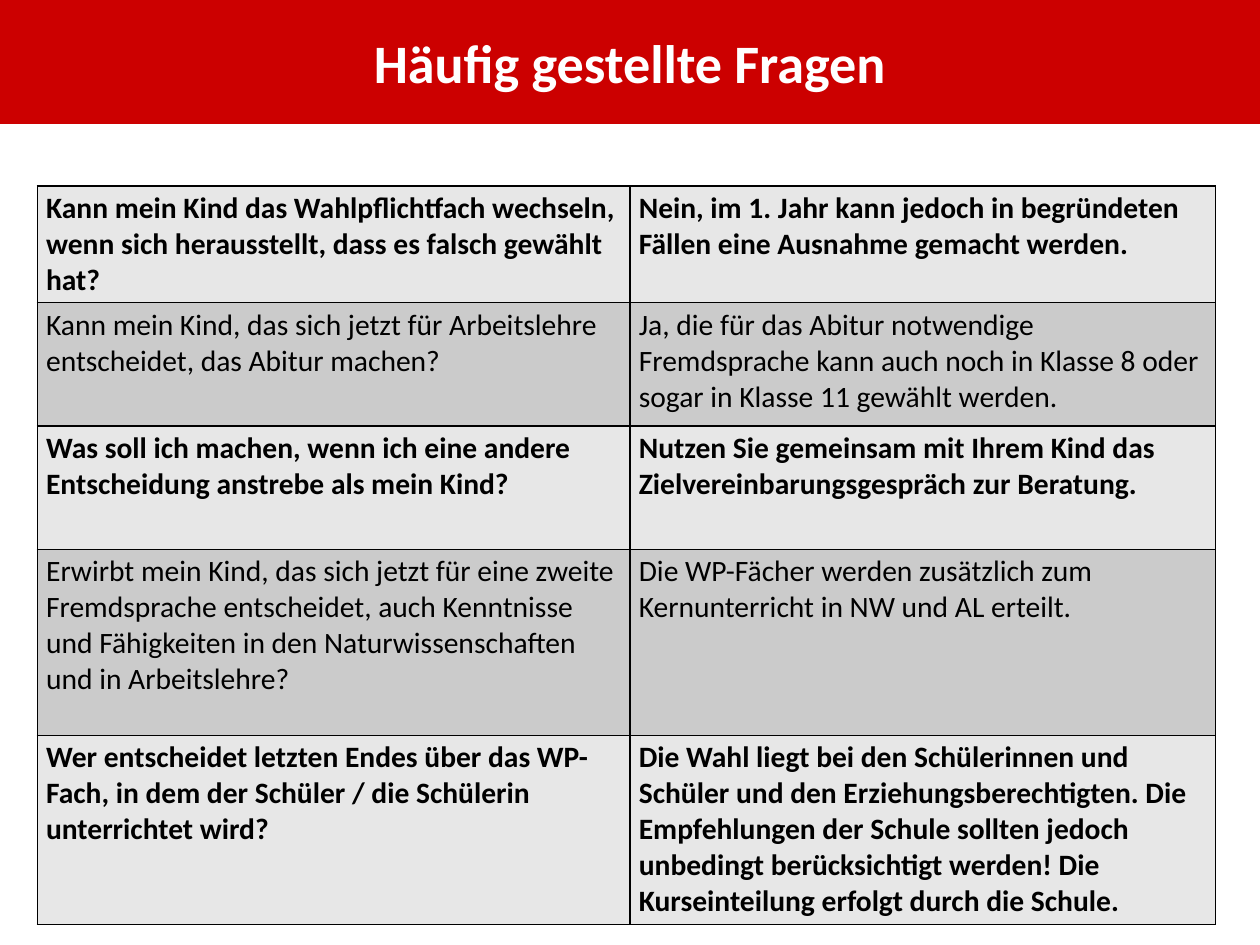
from pptx import Presentation
from pptx.dml.color import RGBColor
from pptx.enum.shapes import MSO_SHAPE
from pptx.enum.text import MSO_ANCHOR, PP_ALIGN
from pptx.oxml import parse_xml
from pptx.oxml.ns import nsdecls
from pptx.util import Inches, Pt

TITLE = "Häufig gestellte Fragen"
FAQ = [
    ("Kann mein Kind das Wahlpflichtfach wechseln, wenn sich herausstellt, dass es falsch gewählt hat?",
     "Nein, im 1. Jahr kann jedoch in begründeten Fällen eine Ausnahme gemacht werden."),
    ("Kann mein Kind, das sich jetzt für Arbeitslehre entscheidet, das Abitur machen?",
     "Ja, die für das Abitur notwendige Fremdsprache kann auch noch in Klasse 8 oder "
     "sogar in Klasse 11 gewählt werden."),
    ("Was soll ich machen, wenn ich eine andere Entscheidung anstrebe als mein Kind?",
     "Nutzen Sie gemeinsam mit Ihrem Kind das Zielvereinbarungsgespräch zur Beratung."),
    ("Erwirbt mein Kind, das sich jetzt für eine zweite Fremdsprache entscheidet, auch "
     "Kenntnisse und Fähigkeiten in den Naturwissenschaften und in Arbeitslehre?",
     "Die WP-Fächer werden zusätzlich zum Kernunterricht in NW und AL erteilt."),
    ("Wer entscheidet letzten Endes über das WP-Fach, in dem der Schüler / die Schülerin unterrichtet wird?",
     "Die Wahl liegt bei den Schülerinnen und Schüler und den Erziehungsberechtigten. "
     "Die Empfehlungen der Schule sollten jedoch unbedingt berücksichtigt werden! "
     "Die Kurseinteilung erfolgt durch die Schule."),
]
COLS = [6.69, 6.61]
ROWS = [1.3, 1.39, 1.39, 2.1, 2.1]
LEFT, TOP = 0.42, 2.1
WIDTH, HEIGHT, BANNER = 14.22, 10.67, 1.4

FONT = "Calibri"
RED = RGBColor(0xCC, 0x00, 0x00)
WHITE = RGBColor(0xFF, 0xFF, 0xFF)
BLACK = RGBColor(0x00, 0x00, 0x00)
BANDS = [RGBColor(0xE7, 0xE7, 0xE7), RGBColor(0xCB, 0xCB, 0xCB)]


def add_text(tf, text, size, color, bold):
    p = tf.paragraphs[0]
    r = p.add_run()
    r.text = text
    r.font.name, r.font.size, r.font.bold = FONT, Pt(size), bold
    r.font.color.rgb = color
    return p


def add_borders(cell):
    tcPr = cell._tc.get_or_add_tcPr()
    for i, side in enumerate(("lnL", "lnR", "lnT", "lnB")):
        tcPr.insert(i, parse_xml(
            f'<a:{side} {nsdecls("a")} w="{Pt(1)}"><a:solidFill>'
            f'<a:srgbClr val="{BLACK}"/></a:solidFill></a:{side}>'))


def add_banner(s):
    sp = s.shapes.add_shape(MSO_SHAPE.RECTANGLE, 0, 0, Inches(WIDTH), Inches(BANNER))
    sp.shadow.inherit = False
    sp.fill.solid()
    sp.fill.fore_color.rgb = RED
    sp.line.fill.background()
    tf = sp.text_frame
    tf.word_wrap = True
    tf.vertical_anchor = MSO_ANCHOR.MIDDLE
    tf.margin_left = tf.margin_right = tf.margin_top = tf.margin_bottom = Inches(0.06)
    add_text(tf, TITLE, 44, WHITE, True).alignment = PP_ALIGN.CENTER


def add_faq(s):
    table = s.shapes.add_table(len(ROWS), len(COLS), Inches(LEFT), Inches(TOP),
                               Inches(sum(COLS)), Inches(sum(ROWS))).table
    table.first_row = table.horz_banding = False
    for col, width in zip(table.columns, COLS):
        col.width = Inches(width)
    for i, (row, height, texts) in enumerate(zip(table.rows, ROWS, FAQ)):
        row.height = Inches(height)
        for cell, text in zip(row.cells, texts):
            cell.fill.solid()
            cell.fill.fore_color.rgb = BANDS[i % 2]
            cell.margin_left = cell.margin_right = Inches(0.1)
            cell.margin_top = cell.margin_bottom = Inches(0.05)
            add_text(cell.text_frame, text, 24, BLACK, i % 2 == 0)
            add_borders(cell)


def main():
    prs = Presentation()
    prs.slide_width, prs.slide_height = Inches(WIDTH), Inches(HEIGHT)
    s = prs.slides.add_slide(prs.slide_layouts[6])
    add_banner(s)
    add_faq(s)
    prs.save("out.pptx")


if __name__ == "__main__":
    main()
